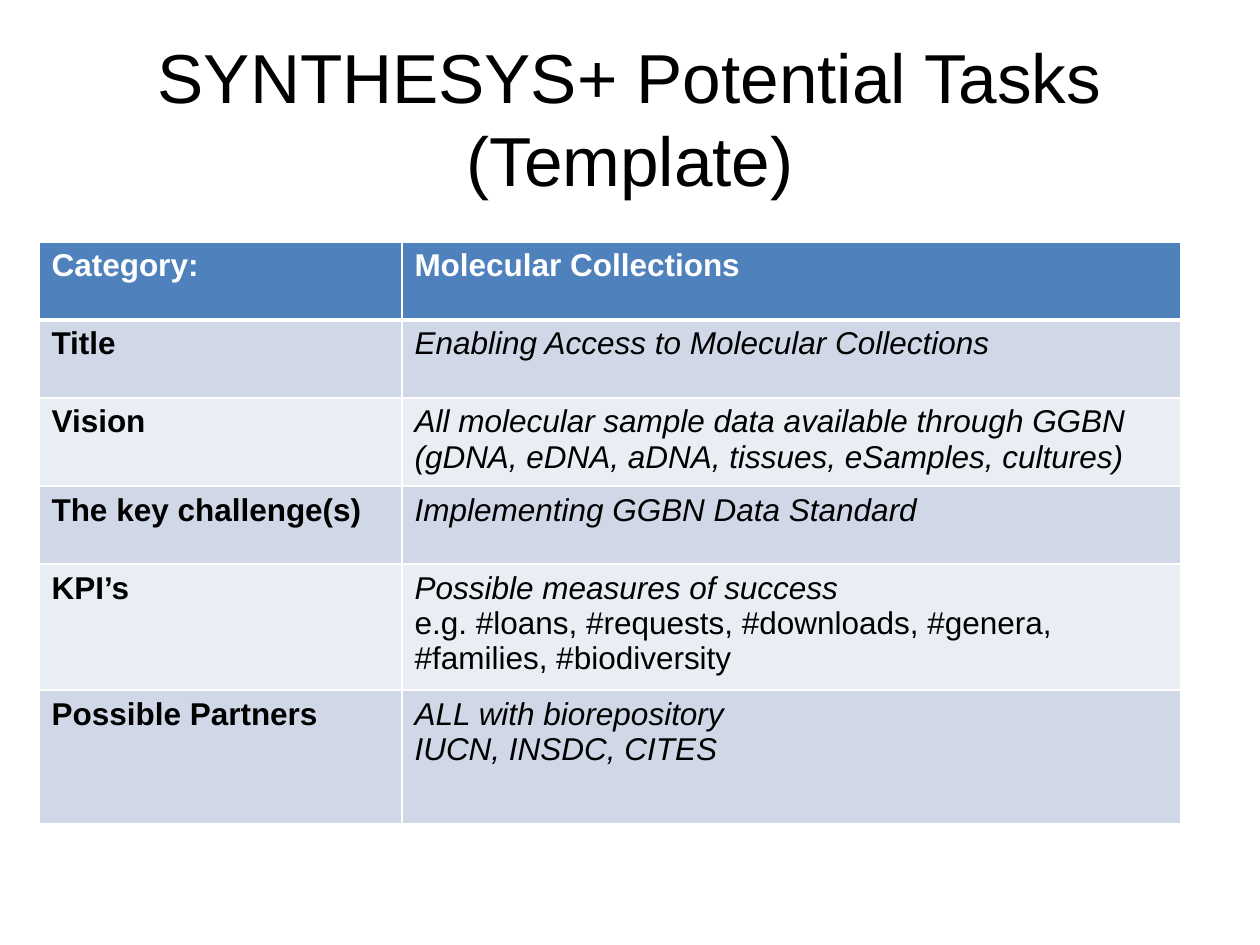
from lxml.etree import SubElement
from pptx import Presentation
from pptx.dml.color import RGBColor
from pptx.enum.text import MSO_ANCHOR as ANCHOR, PP_ALIGN as ALIGN
from pptx.oxml.ns import qn
from pptx.util import Emu, Pt

PX = 914400 / 126
COLORS = {"text": "000000", "white": "FFFFFF", "header": "4F81BD",
          "odd": "D0D8E8", "even": "E9EDF4"}
COLUMNS = [363, 779]
ROWS = [
    (78, "Category:", [("Molecular Collections", False)]),
    (78, "Title", [("Enabling Access to Molecular Collections", True)]),
    (78, "Vision", [("All molecular sample data available through GGBN "
                     "(gDNA, eDNA, aDNA, tissues, eSamples, cultures)", True)]),
    (78, "The key challenge(s)", [("Implementing GGBN Data Standard", True)]),
    (78, "KPI’s", [("Possible measures of success", True),
                   ("e.g. #loans, #requests, #downloads, #genera, "
                    "#families, #biodiversity", False)]),
    (134, "Possible Partners", [("ALL with biorepository", True),
                                ("IUCN, INSDC, CITES", True)]),
]


def px(n):
    return Emu(round(n * PX))


def rgb(name):
    return RGBColor.from_string(COLORS[name])


def write(p, text, size=18, color="text", bold=False, italic=False, align=ALIGN.LEFT):
    p.alignment = align
    r = p.add_run()
    r.text = text
    f = r.font
    f.name, f.size, f.bold, f.italic = "Arial", Pt(size), bold, italic
    f.color.rgb = rgb(color)


def set_borders(cell, **widths):
    tc_pr = cell._tc.get_or_add_tcPr()
    for i, side in enumerate("LRTB"):
        ln = SubElement(tc_pr, qn(f"a:ln{side}"), w=str(Pt(widths.get(side, 1))))
        fill = SubElement(ln, qn("a:solidFill"))
        SubElement(fill, qn("a:srgbClr"), val=COLORS["white"])
        tc_pr.insert(i, ln)


def add_title(s, x, y, w, h):
    tf = s.shapes.add_textbox(px(x), px(y), px(w), px(h)).text_frame
    tf.word_wrap = True
    tf.vertical_anchor = ANCHOR.MIDDLE
    write(tf.paragraphs[0], "SYNTHESYS+ Potential Tasks (Template)",
          size=39.6, align=ALIGN.CENTER)


def add_task_table(s, x, y):
    heights = [row[0] for row in ROWS]
    table = s.shapes.add_table(len(ROWS), len(COLUMNS), px(x), px(y),
                               px(sum(COLUMNS)), px(sum(heights))).table
    for column, width in zip(table.columns, COLUMNS):
        column.width = px(width)
    for i, (height, label, lines) in enumerate(ROWS):
        table.rows[i].height = px(height)
        header = i == 0
        fill = "header" if header else "odd" if i % 2 else "even"
        color = "white" if header else "text"
        for j, content in enumerate([[(label, False)], lines]):
            cell = table.cell(i, j)
            cell.fill.solid()
            cell.fill.fore_color.rgb = rgb(fill)
            set_borders(cell, T=3 if i == 1 else 1, B=3 if header else 1)
            tf = cell.text_frame
            for k, (text, italic) in enumerate(content):
                p = tf.add_paragraph() if k else tf.paragraphs[0]
                write(p, text, color=color, bold=header or j == 0, italic=italic)


def main():
    prs = Presentation()
    prs.slide_width, prs.slide_height = px(1260), px(945)
    s = prs.slides.add_slide(prs.slide_layouts[6])
    add_title(s, 63, 38, 1134, 158)
    add_task_table(s, 39, 242)
    prs.save("out.pptx")


if __name__ == "__main__":
    main()
